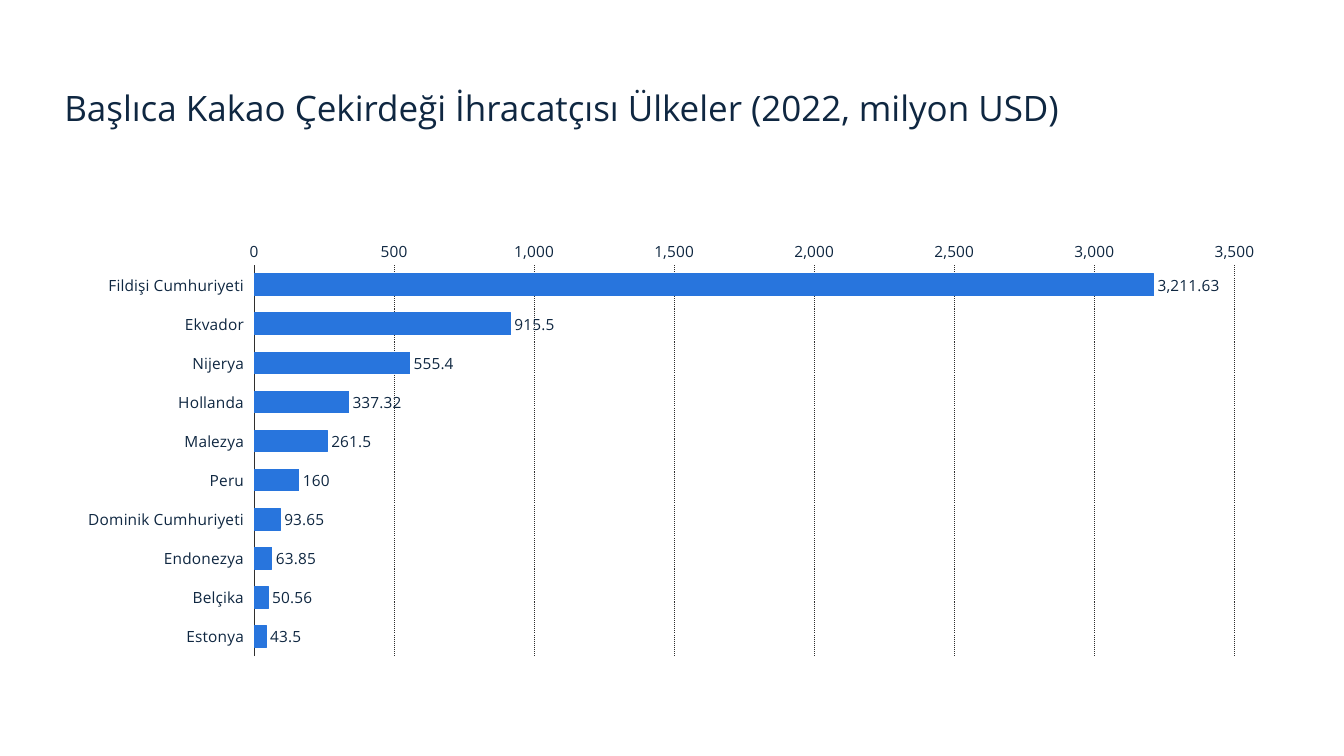
from lxml import etree
from pptx import Presentation
from pptx.chart.data import CategoryChartData
from pptx.dml.color import RGBColor
from pptx.enum.chart import XL_CHART_TYPE, XL_LABEL_POSITION, XL_TICK_LABEL_POSITION, XL_TICK_MARK
from pptx.enum.dml import MSO_LINE
from pptx.enum.text import MSO_ANCHOR
from pptx.util import Inches, Pt

BAR = XL_CHART_TYPE.BAR_CLUSTERED
OUTSIDE = XL_LABEL_POSITION.OUTSIDE_END
LOW = XL_TICK_LABEL_POSITION.LOW
NO_TICK = XL_TICK_MARK.NONE
DOTTED = MSO_LINE.ROUND_DOT
BOTTOM = MSO_ANCHOR.BOTTOM

FONT = "Open Sans"
NAVY = "0F2741"
BLUE = "2875DD"
GRAY = "2F2F2F"
CHART_NS = "http://schemas.openxmlformats.org/drawingml/2006/chart"

TITLE = "Başlıca Kakao Çekirdeği İhracatçısı Ülkeler (2022, milyon USD)"
EXPORTS = {
    "Fildişi Cumhuriyeti": 3211.63,
    "Ekvador": 915.5,
    "Nijerya": 555.4,
    "Hollanda": 337.32,
    "Malezya": 261.5,
    "Peru": 160,
    "Dominik Cumhuriyeti": 93.65,
    "Endonezya": 63.85,
    "Belçika": 50.56,
    "Estonya": 43.5,
}


def color(value):
    return RGBColor.from_string(value)


def style_font(font, size):
    font.name = FONT
    font.size = Pt(size)
    font.color.rgb = color(NAVY)


def style_line(line, value):
    line.color.rgb = color(value)
    line.width = Pt(0.75)


def add_title(page, left, top, width, height):
    box = page.shapes.add_textbox(Inches(left), Inches(top), Inches(width), Inches(height))
    frame = box.text_frame
    frame.word_wrap = True
    frame.vertical_anchor = BOTTOM
    span = frame.paragraphs[0].add_run()
    span.text = TITLE
    style_font(span.font, 25)


def place_plot(chart, left, top, width, height):
    plot_area = chart.element.find(f".//{{{CHART_NS}}}plotArea")
    for old in plot_area.findall(f"{{{CHART_NS}}}layout"):
        plot_area.remove(old)
    layout = etree.Element(f"{{{CHART_NS}}}layout")
    manual = etree.SubElement(layout, f"{{{CHART_NS}}}manualLayout")
    settings = {"layoutTarget": "inner", "xMode": "edge", "yMode": "edge",
                "x": left, "y": top, "w": width, "h": height}
    for name, value in settings.items():
        etree.SubElement(manual, f"{{{CHART_NS}}}{name}").set("val", str(value))
    plot_area.insert(0, layout)


def style_axes(chart):
    countries, amounts = chart.category_axis, chart.value_axis
    for axis in (countries, amounts):
        axis.major_tick_mark = NO_TICK
        axis.minor_tick_mark = NO_TICK
        style_font(axis.tick_labels.font, 11)
    countries.reverse_order = True
    countries.tick_label_position = LOW
    style_line(countries.format.line, GRAY)

    amounts.minimum_scale = 0
    amounts.maximum_scale = 3500
    amounts.major_unit = 500
    amounts.tick_labels.number_format = "#,##0"
    amounts.tick_labels.number_format_is_linked = False
    amounts.format.line.fill.background()
    grid = amounts.major_gridlines.format.line
    style_line(grid, GRAY)
    grid.dash_style = DOTTED


def add_export_chart(page, left, top, width, height):
    data = CategoryChartData()
    data.categories = list(EXPORTS)
    data.add_series("Series 1", list(EXPORTS.values()))
    chart = page.shapes.add_chart(
        BAR, Inches(left), Inches(top), Inches(width), Inches(height), data).chart
    chart.has_title = False
    chart.has_legend = False
    style_font(chart.font, 11)
    style_axes(chart)

    plot = chart.plots[0]
    plot.vary_by_categories = False
    plot.gap_width = 80
    plot.overlap = -30
    bars = plot.series[0]
    bars.format.fill.solid()
    bars.format.fill.fore_color.rgb = color(BLUE)
    style_line(bars.format.line, BLUE)

    labels = bars.data_labels
    labels.show_value = True
    labels.position = OUTSIDE
    labels.number_format = "[<1000]General;#,##0.00"
    labels.number_format_is_linked = False
    style_font(labels.font, 11)
    place_plot(chart, 0.156, 0.077, 0.807, 0.902)


def main():
    deck = Presentation()
    deck.slide_width = Inches(13.33)
    deck.slide_height = Inches(7.5)
    page = deck.slides.add_slide(deck.slide_layouts[6])
    add_export_chart(page, 0.64, 2.3, 12.05, 4.3)
    add_title(page, 0.54, 0.46, 12.24, 0.86)
    deck.save("out.pptx")


if __name__ == "__main__":
    main()
